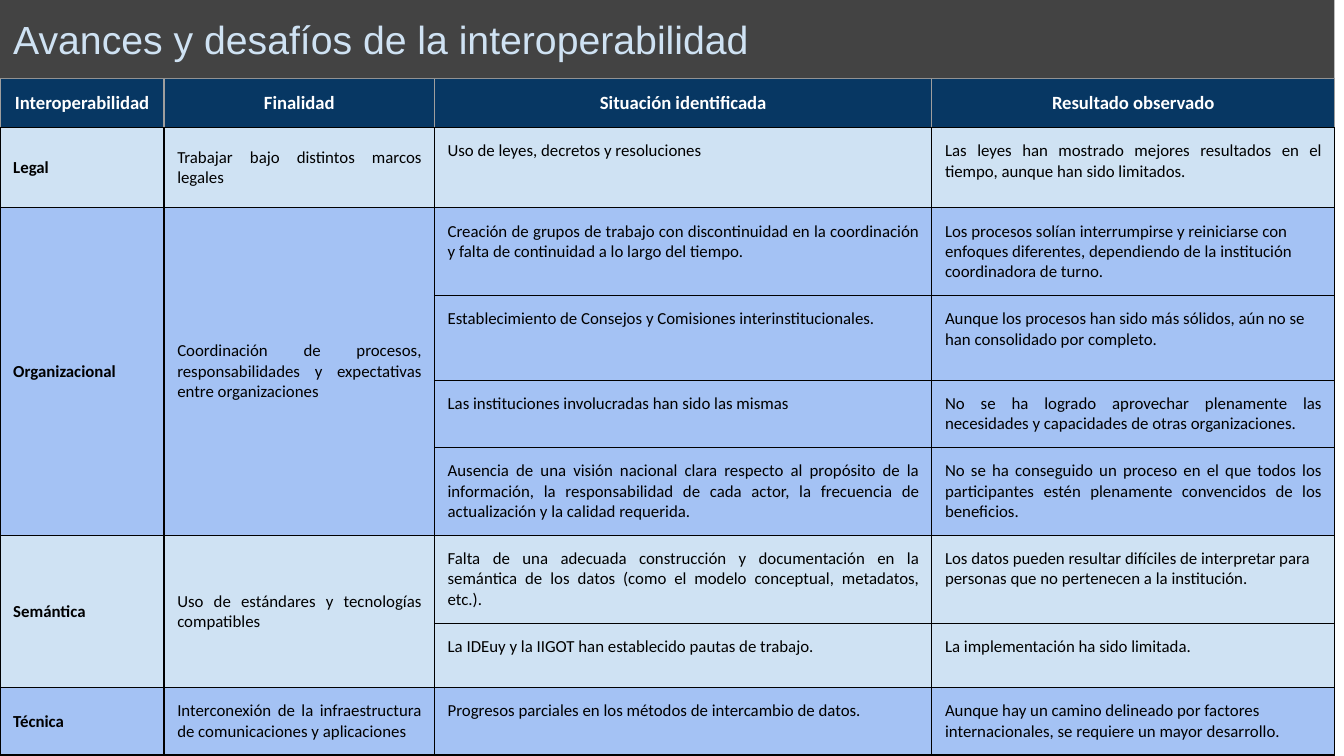
from lxml.etree import SubElement as SubEl
from pptx import Presentation
from pptx.dml.color import RGBColor as RGB
from pptx.enum.shapes import MSO_SHAPE as Shape
from pptx.enum.text import MSO_ANCHOR as Anchor, PP_ALIGN as Align
from pptx.oxml.ns import qn
from pptx.util import Cm, Pt

WHITE, BLACK = RGB(0xFF, 0xFF, 0xFF), RGB(0, 0, 0)
NAVY, DARK, GREY = RGB(0x07, 0x37, 0x63), RGB(0x43, 0x43, 0x43), RGB(0x9E, 0x9E, 0x9E)
PALE, BLUE = RGB(0xCF, 0xE2, 0xF3), RGB(0xA4, 0xC2, 0xF4)

PAD = Cm(0.25)
WIDTHS = [3.1, 5.11, 9.4, 7.61]
HEIGHTS = [0.77, 1.52, 1.6, 1.6, 1.22, 1.6, 1.22, 1.22, 1.22]
HEADS = ["Interoperabilidad", "Finalidad", "Situación identificada", "Resultado observado"]
JUST, LEFT = Align.JUSTIFY, Align.LEFT

# Level, purpose, then (situation, result, alignment of the result)
GROUPS = [
    ("Legal", "Trabajar bajo distintos marcos legales", [
        ("Uso de leyes, decretos y resoluciones",
         "Las leyes han mostrado mejores resultados en el tiempo, aunque han sido limitados.", JUST),
    ]),
    ("Organizacional",
     "Coordinación de procesos, responsabilidades y expectativas entre organizaciones", [
        ("Creación de grupos de trabajo con discontinuidad en la coordinación y falta de "
         "continuidad a lo largo del tiempo.",
         "Los procesos solían interrumpirse y reiniciarse con enfoques diferentes, "
         "dependiendo de la institución coordinadora de turno.", LEFT),
        ("Establecimiento de Consejos y Comisiones interinstitucionales.",
         "Aunque los procesos han sido más sólidos, aún no se han consolidado por completo.", LEFT),
        ("Las instituciones involucradas han sido las mismas",
         "No se ha logrado aprovechar plenamente las necesidades y capacidades de otras "
         "organizaciones.", JUST),
        ("Ausencia de una visión nacional clara respecto al propósito de la información, la "
         "responsabilidad de cada actor, la frecuencia de actualización y la calidad requerida.",
         "No se ha conseguido un proceso en el que todos los participantes estén plenamente "
         "convencidos de los beneficios.", JUST),
     ]),
    ("Semántica", "Uso de estándares y tecnologías compatibles", [
        ("Falta de una adecuada construcción y documentación en la semántica de los datos "
         "(como el modelo conceptual, metadatos, etc.).",
         "Los datos pueden resultar difíciles de interpretar para personas que no pertenecen "
         "a la institución.", LEFT),
        ("La IDEuy y la IIGOT han establecido pautas de trabajo.",
         "La implementación ha sido limitada.", JUST),
    ]),
    ("Técnica", "Interconexión de la infraestructura de comunicaciones y aplicaciones", [
        ("Progresos parciales en los métodos de intercambio de datos.",
         "Aunque hay un camino delineado por factores internacionales, se requiere un mayor "
         "desarrollo.", LEFT),
    ]),
]


def set_text(frame, text, font, size, color, bold=False, align=LEFT):
    frame.text = text
    par = frame.paragraphs[0]
    par.alignment = align
    style = par.runs[0].font
    style.name, style.size, style.bold = font, Pt(size), bold
    style.color.rgb = color
    return par


def set_pad(box):
    box.margin_left = box.margin_right = box.margin_top = box.margin_bottom = PAD


def dress(cell, fill, edge):
    """Set the borders, fill and margins of a cell."""
    props = cell._tc.get_or_add_tcPr()
    for side, color in zip("LRTB", [edge, edge, edge, BLACK]):
        line = SubEl(props, qn(f"a:ln{side}"), w=str(Pt(0.75)))
        SubEl(SubEl(line, qn("a:solidFill")), qn("a:srgbClr"), val=str(color))
    cell.fill.solid()
    cell.fill.fore_color.rgb = fill
    set_pad(cell)


def add_title(slide, left, top, width, height):
    bar = slide.shapes.add_shape(Shape.RECTANGLE, left, top, width, height)
    bar.shadow.inherit = False
    bar.fill.solid()
    bar.fill.fore_color.rgb = DARK
    bar.line.fill.background()
    frame = bar.text_frame
    frame.word_wrap = True
    frame.vertical_anchor = Anchor.MIDDLE
    set_pad(frame)
    set_text(frame, "Avances y desafíos de la interoperabilidad", "Arial", 21, PALE)


def add_grid(slide, left, top, width, height):
    grid = slide.shapes.add_table(len(HEIGHTS), len(WIDTHS), left, top, width, height).table
    for col, size in zip(grid.columns, WIDTHS):
        col.width = Cm(size)
    for row, size in zip(grid.rows, HEIGHTS):
        row.height = Cm(size)

    # Header row
    for col, head in enumerate(HEADS):
        cell = grid.cell(0, col)
        dress(cell, NAVY, GREY)
        set_text(cell.text_frame, head, "Calibri", 10, WHITE, True, Align.CENTER)

    # Groups of rows in alternating colours
    first = 1
    for num, (name, goal, pairs) in enumerate(GROUPS):
        last = first + len(pairs) - 1
        for row, (case, result, align) in enumerate(pairs, first):
            for col in range(len(WIDTHS)):
                dress(grid.cell(row, col), BLUE if num % 2 else PALE, BLACK)
            for col, text, side in [(2, case, JUST), (3, result, align)]:
                set_text(grid.cell(row, col).text_frame, text, "Calibri", 9, BLACK, align=side)
        for col, text in enumerate([name, goal]):
            cell = grid.cell(first, col)
            if last > first:
                cell.merge(grid.cell(last, col))
            cell.vertical_anchor = Anchor.MIDDLE
            par = set_text(cell.text_frame, text, "Calibri", 9, BLACK, col == 0, JUST)
            if col == 1:
                par.space_after = Pt(12)
        first = last + 1


def main():
    deck = Presentation()
    deck.slide_width, deck.slide_height = Cm(25.4), Cm(14.29)
    slide = deck.slides.add_slide(deck.slide_layouts[6])
    wide, bar = Cm(sum(WIDTHS)), Cm(1.48)
    add_grid(slide, 0, bar, wide, Cm(sum(HEIGHTS)))
    add_title(slide, 0, 0, wide, bar)
    deck.save("out.pptx")


if __name__ == "__main__":
    main()
